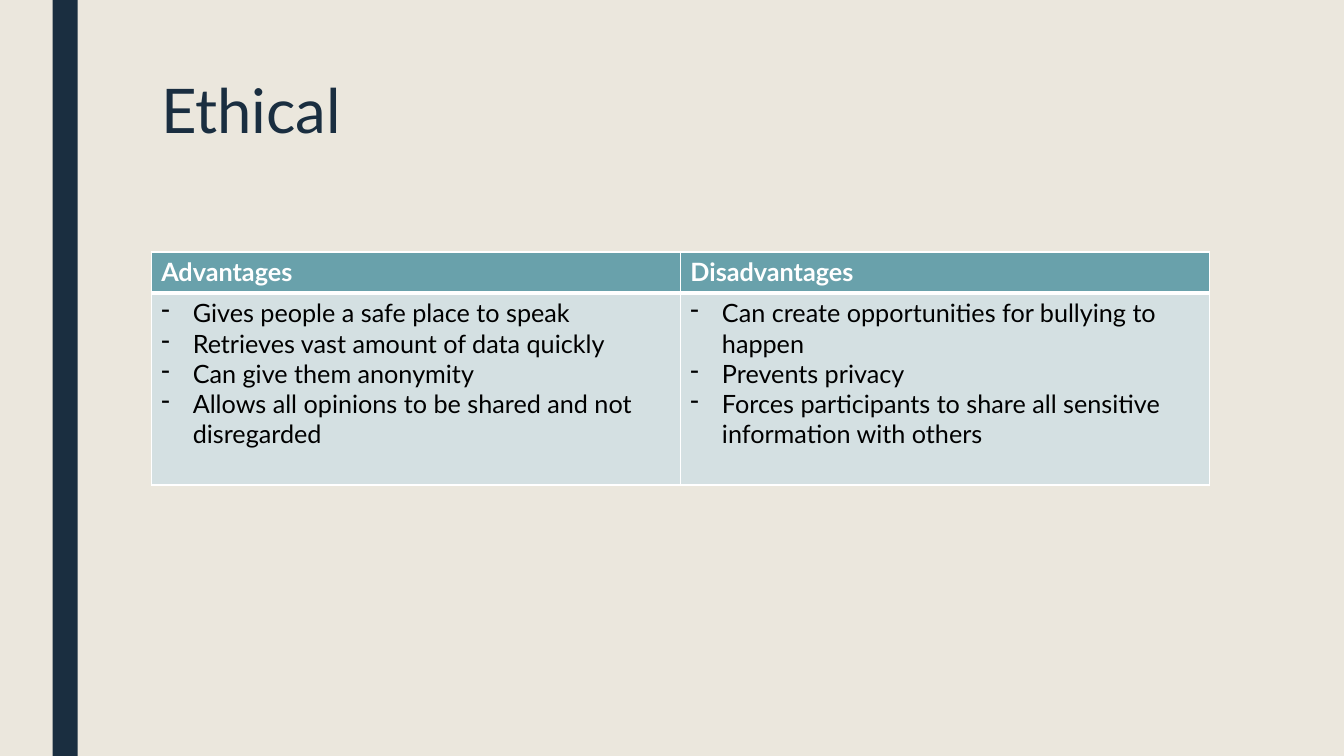
from pptx import Presentation
from pptx.dml.color import RGBColor
from pptx.enum import shapes, text
from pptx.oxml import parse_xml
from pptx.oxml.ns import nsdecls
from pptx.util import Pt

TITLE = "Ethical"
COLUMNS = {
    "Advantages": [
        "Gives people a safe place to speak",
        "Retrieves vast amount of data quickly",
        "Can give them anonymity",
        "Allows all opinions to be shared and not disregarded",
    ],
    "Disadvantages": [
        "Can create opportunities for bullying to happen",
        "Prevents privacy",
        "Forces participants to share all sensitive information with others",
    ],
}

FONT = "Lato"
CREAM = RGBColor(0xEB, 0xE7, 0xDD)
NAVY = RGBColor(0x1A, 0x2E, 0x40)
TEAL = RGBColor(0x69, 0xA1, 0xAB)
PALE_TEAL = RGBColor(0xD4, 0xE0, 0xE2)
WHITE = RGBColor(0xFF, 0xFF, 0xFF)
BLACK = RGBColor(0, 0, 0)

LEFT, WIDTH = 108, 756
ROW_HEIGHTS = (29.2, 137.2)
BULLET_INDENT = Pt(22.5)


def style_font(font, size, color, bold=False):
    font.name, font.size, font.bold = FONT, Pt(size), bold
    font.color.rgb = color


def add_borders(cell, top, bottom):
    """Draw white cell edges; call before the cell's fill is set."""
    properties = cell._tc.get_or_add_tcPr()
    for side, width in zip("LRTB", (1, 1, top, bottom)):
        properties.append(parse_xml(
            f'<a:ln{side} {nsdecls("a")} w="{Pt(width)}"><a:solidFill>'
            f'<a:srgbClr val="{WHITE}"/></a:solidFill></a:ln{side}>'))


def add_dash(paragraph):
    properties = paragraph._p.get_or_add_pPr()
    properties.set("marL", str(BULLET_INDENT))
    properties.set("indent", str(-BULLET_INDENT))
    properties.append(parse_xml(f'<a:buChar {nsdecls("a")} char="-"/>'))


def fill_cell(cell, lines, fill, color, top, bottom, header):
    add_borders(cell, top, bottom)
    cell.fill.solid()
    cell.fill.fore_color.rgb = fill
    cell.text_frame.text = "\n".join(lines)
    for paragraph in cell.text_frame.paragraphs:
        if not header:
            add_dash(paragraph)
        for run in paragraph.runs:
            style_font(run.font, 18, color, header)


def add_title(slide):
    box = slide.shapes.add_textbox(Pt(LEFT), Pt(54), Pt(WIDTH), Pt(116.64))
    frame = box.text_frame
    frame.word_wrap = True
    frame.vertical_anchor = text.MSO_ANCHOR.TOP
    frame.text = TITLE
    paragraph = frame.paragraphs[0]
    paragraph.line_spacing = 0.89
    style_font(paragraph.runs[0].font, 44, NAVY)


def add_comparison(slide):
    table = slide.shapes.add_table(
        len(ROW_HEIGHTS), len(COLUMNS), Pt(LEFT), Pt(180), Pt(WIDTH),
        Pt(sum(ROW_HEIGHTS))).table
    for row, height in zip(table.rows, ROW_HEIGHTS):
        row.height = Pt(height)
    for index, (heading, points) in enumerate(COLUMNS.items()):
        table.columns[index].width = Pt(WIDTH / len(COLUMNS))
        fill_cell(table.cell(0, index), [heading], TEAL, WHITE, 1, 3, True)
        fill_cell(table.cell(1, index), points, PALE_TEAL, BLACK, 3, 1, False)


def main():
    presentation = Presentation()
    presentation.slide_width, presentation.slide_height = Pt(960), Pt(540)
    slide = presentation.slides.add_slide(presentation.slide_layouts[6])
    slide.background.fill.solid()
    slide.background.fill.fore_color.rgb = CREAM

    stripe = slide.shapes.add_shape(
        shapes.MSO_SHAPE.RECTANGLE, Pt(37.5), Pt(0), Pt(18), Pt(540))
    stripe.shadow.inherit = False
    stripe.fill.solid()
    stripe.fill.fore_color.rgb = NAVY
    stripe.line.fill.background()

    add_title(slide)
    add_comparison(slide)
    presentation.save("out.pptx")


if __name__ == "__main__":
    main()
